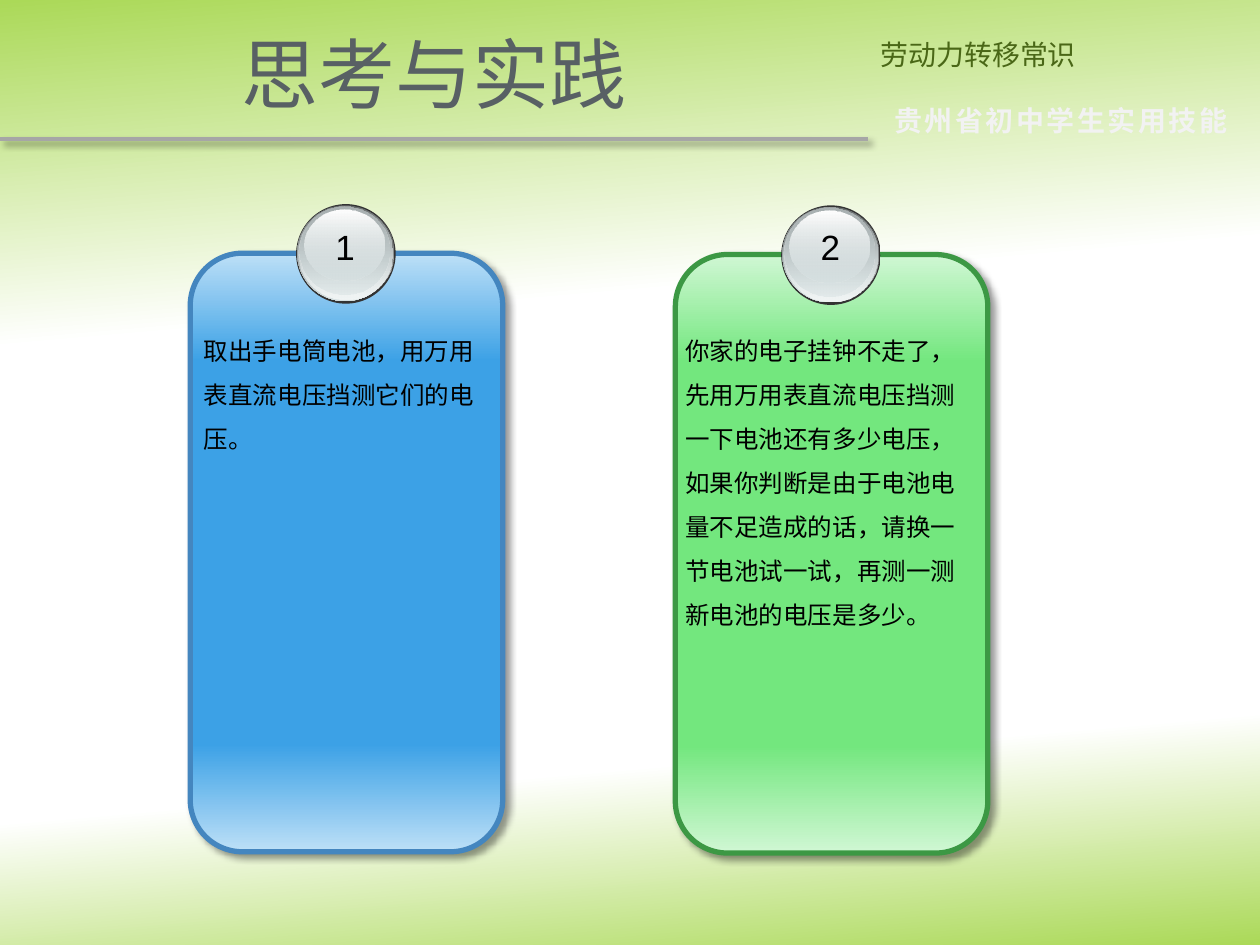
"""Builds a slide with two numbered practice cards."""
from lxml import etree
from pptx import Presentation
from pptx.dml.color import RGBColor
from pptx.enum import shapes, text
from pptx.oxml import ns
from pptx.util import Inches, Pt

SANS = "Noto Sans CJK SC"
ALIGN = text.PP_ALIGN


def paint(node, kind, stops, **attrs):
    """Add a gradient, shadow or solid colour to a node."""
    part = etree.SubElement(node, ns.qn(kind), {k: str(v) for k, v in attrs.items()})
    home = part
    if kind == "a:gradFill":
        home = etree.SubElement(part, ns.qn("a:gsLst"))
    for pos, tone, *alpha in stops:
        spot = home
        if home is not part:
            spot = etree.SubElement(home, ns.qn("a:gs"), pos=str(pos * 1000))
        hue = etree.SubElement(spot, ns.qn("a:srgbClr"), val=tone)
        if alpha:
            etree.SubElement(hue, ns.qn("a:alpha"), val=str(alpha[0] * 1000))
    return part


def write(home, words, x, y, w, h, size, tone, font=SANS, align=ALIGN.LEFT,
          wrap=True, lead=None, mid=False, bold=False, gap=0):
    """Add a text box with one formatted paragraph."""
    box = home.add_textbox(Inches(x), Inches(y), Inches(w), Inches(h))
    frame = box.text_frame
    frame.word_wrap = wrap
    if mid:
        frame.vertical_anchor = text.MSO_ANCHOR.MIDDLE
    para = frame.paragraphs[0]
    para.alignment, para.line_spacing = align, lead
    run = para.add_run()
    run.text = words
    run.font.size, run.font.name, run.font.bold = Pt(size), font, bold
    run.font.color.rgb = RGBColor.from_string(tone)
    props = run.font._element
    etree.SubElement(props, ns.qn("a:ea"), typeface=font)
    if gap:
        props.set("spc", str(gap))


deck = Presentation()
deck.slide_width, deck.slide_height = Inches(10), Inches(7.5)
slide = deck.slides.add_slide(deck.slide_layouts[6])

cards = [
    ("1", 1.51, 2.01, 1.52, 1.16, "BDE0F7", "3CA1E6", "4486BF",
     "取出手电筒电池，用万用表直流电压挡测它们的电压。"),
    ("2", 5.36, 2.02, 5.34, 2.57, "D0F7D4", "73E77E", "3C9844",
     "你家的电子挂钟不走了，先用万用表直流电压挡测一下电池还有多少电压，"
     "如果你判断是由于电池电量不足造成的话，请换一节电池试一试，"
     "再测一测新电池的电压是多少。"),
]
discs = [
    (0.84, -0.39, 0.79, 0.79, [(0, "333333"), (100, "333333")]),
    (0.85, -0.38, 0.76, 0.76, [(0, "636869"), (100, "D6E1E2")]),
    (0.86, -0.38, 0.75, 0.75, [(0, "D6E1E2", 0), (100, "F1F5F5")]),
    (0.87, -0.37, 0.71, 0.70, [(0, "AAB2B3"), (100, "D6E1E2", 48)]),
    (0.91, -0.35, 0.63, 0.57, [(0, "FFFFFF"), (100, "D6E1E2", 38)]),
]
fills = []
raised = []

slide.background.fill.solid()
back = slide.element.find(".//" + ns.qn("p:bgPr"))
fills.append((back, [(0, "ABD958"), (33, "FFFFFF"), (78, "FFFFFF"), (100, "ABD958")], 85))

for num, x, y, left, high, pale, full, edge, words in cards:
    group = slide.shapes.add_group_shape().shapes
    card = group.add_shape(shapes.MSO_SHAPE.ROUNDED_RECTANGLE,
                           Inches(x), Inches(y), Inches(2.48), Inches(4.75))
    card.fill.solid()
    card.line.color.rgb = RGBColor.from_string(edge)
    card.line.width = Pt(3)
    fills.append((card.element.spPr, [(0, pale), (18, full), (82, full), (100, pale)], 90))
    raised.append(card)
    for dx, dy, w, h, stops in discs:
        disc = group.add_shape(shapes.MSO_SHAPE.OVAL, Inches(x + dx), Inches(y + dy),
                               Inches(w), Inches(h))
        disc.fill.solid()
        disc.line.fill.background()
        disc.shadow.inherit = False
        fills.append((disc.element.spPr, stops, 90))
    write(group, num, x + 0.96, 1.74, 0.54, 0.66, 20, "000000", font="Arial",
          align=ALIGN.CENTER, wrap=False)
    write(group, words, left, 2.5, 2.48, high, 14, "000000", lead=1.5)

for node, stops, angle in fills:
    old = node.find(ns.qn("a:solidFill"))
    new = paint(node, "a:gradFill", stops, rotWithShape=1)
    etree.SubElement(new, ns.qn("a:lin"), ang=str(angle * 60000), scaled="0")
    node.replace(old, new)

rule = slide.shapes.add_connector(shapes.MSO_CONNECTOR.STRAIGHT,
                                  Inches(0), Inches(1.1), Inches(6.89), Inches(1.1))
rule.line.color.rgb = RGBColor.from_string("A6A6A6")
rule.line.width = Pt(2.25)
raised.append(rule)
for shape in raised:
    glow = etree.SubElement(shape.element.spPr, ns.qn("a:effectLst"))
    paint(glow, "a:outerShdw", [(0, "000000", 40)], blurRad=Pt(4), dist=Pt(3),
          dir=45 * 60000, algn="tl", rotWithShape=0)

write(slide.shapes, "劳动力转移常识", 6.89, 0.25, 3.11, 0.37, 16, "4A6717",
      align=ALIGN.JUSTIFY)
write(slide.shapes, "贵州省初中学生实用技能", 7, 0.77, 2.9, 0.37, 16, "F2F2F2",
      bold=True, wrap=False, gap=150)
write(slide.shapes, "思考与实践", 0, 0.07, 6.89, 1.02, 44, "586064",
      align=ALIGN.CENTER, mid=True)

deck.save("out.pptx")
